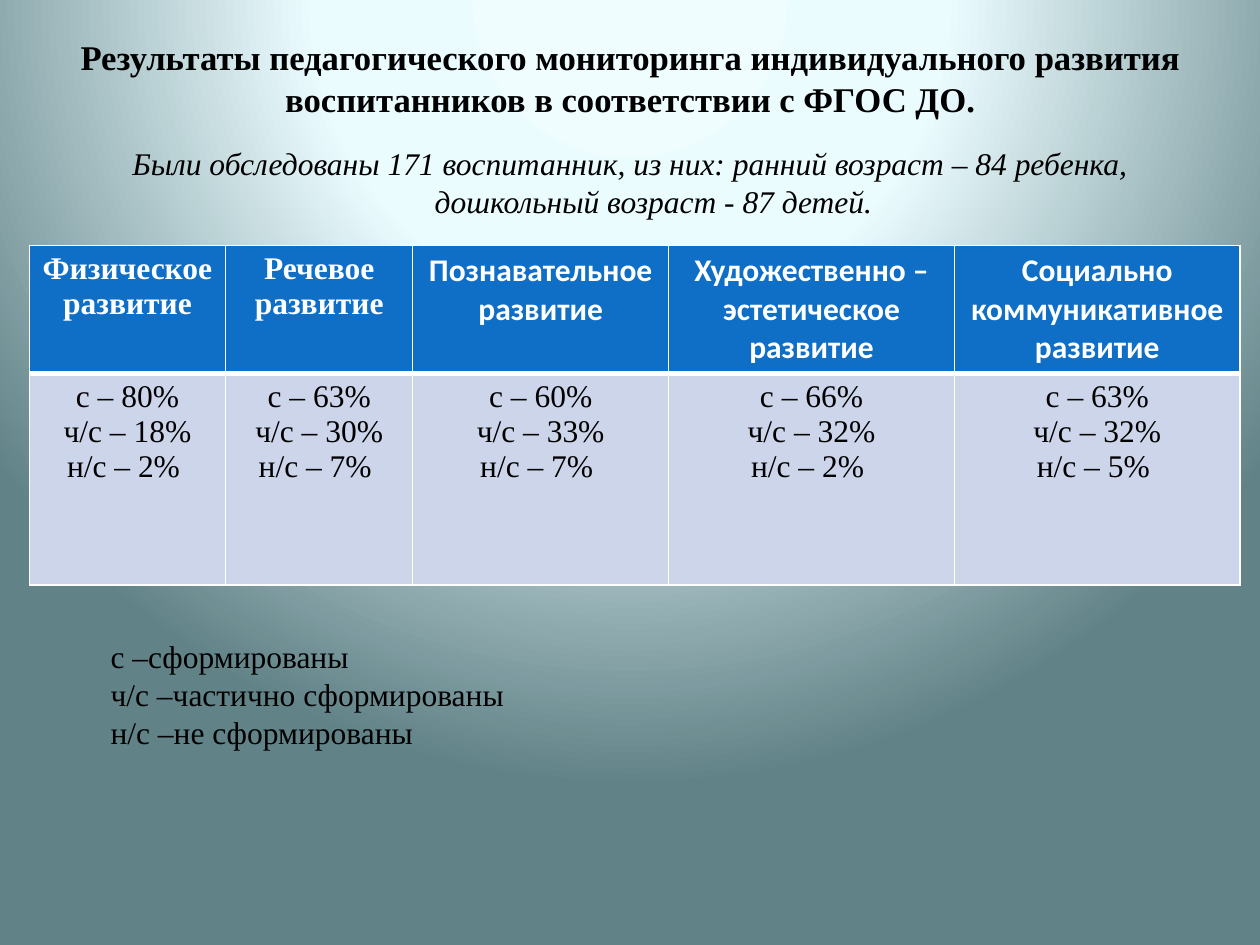
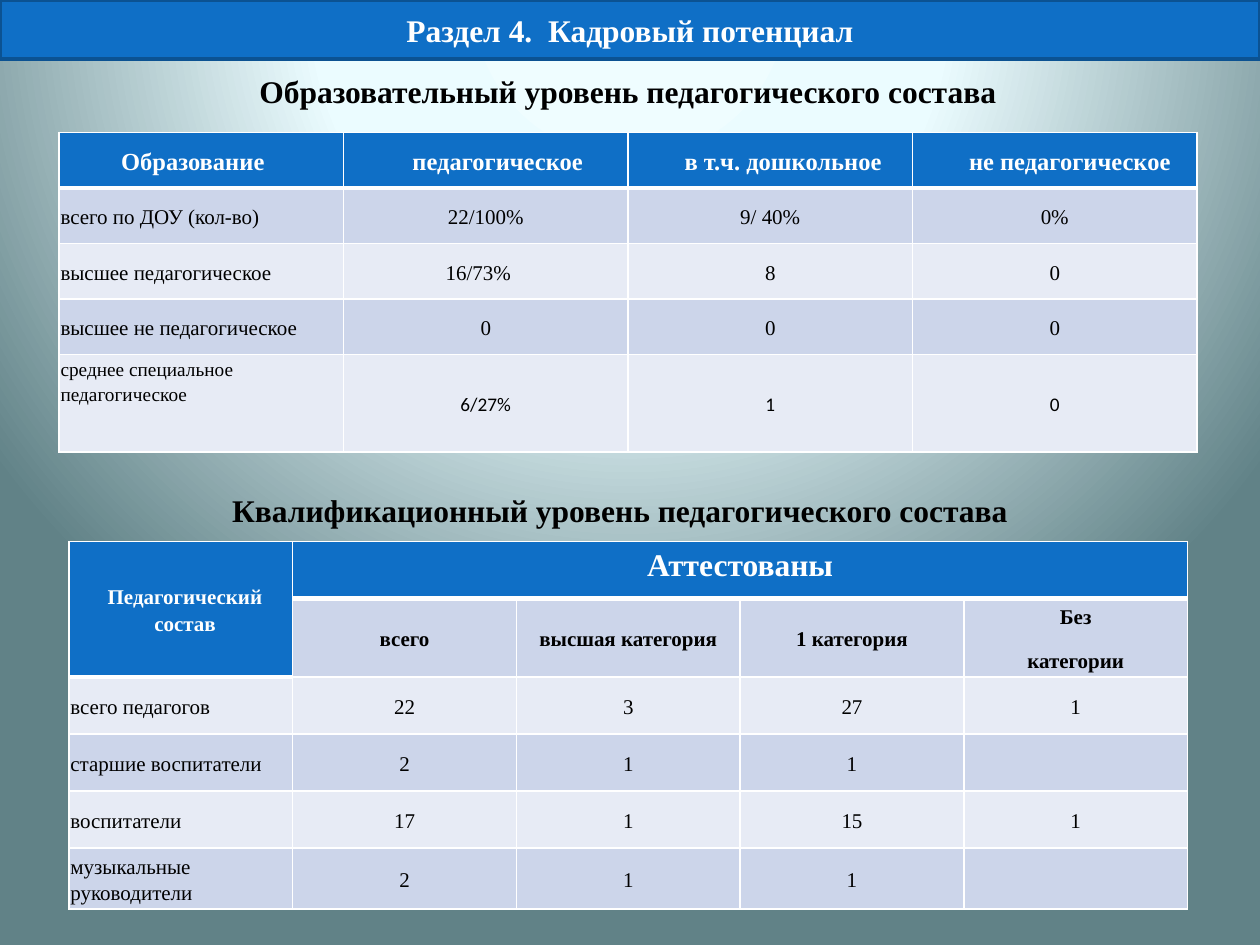
"""Build two slides with monitoring results and staff qualification tables."""
from lxml import etree
from pptx import Presentation
from pptx.dml.color import RGBColor
from pptx.enum.shapes import MSO_SHAPE
from pptx.enum.text import MSO_ANCHOR, MSO_AUTO_SIZE, PP_ALIGN
from pptx.oxml.ns import qn
from pptx.util import Cm, Pt

LEFT, CENTER, RIGHT = PP_ALIGN.LEFT, PP_ALIGN.CENTER, PP_ALIGN.RIGHT
TOP, MIDDLE = MSO_ANCHOR.TOP, MSO_ANCHOR.MIDDLE
RECTANGLE = MSO_SHAPE.RECTANGLE
NO_AUTOFIT = MSO_AUTO_SIZE.NONE

SERIF, SANS = "Times New Roman", "Calibri"
COLORS = {
    "accent": "0F6FC6",
    "accent_edge": "0B5292",
    "band_dark": "CCD5EA",
    "band_light": "E7EBF5",
    "white": "FFFFFF",
    "black": "000000",
}
BACKGROUND_STOPS = ((0, "EFFDFF"), (40, "EBFCFF"), (100, "618287"))

MONITORING = [
    ["Физическое развитие", "Речевое развитие", "Познавательное развитие",
     "Художественно – эстетическое развитие", "Социально коммуникативное\nразвитие"],
    ["с – 80%\nч/с – 18%\nн/с – 2% ", "с – 63%\nч/с – 30%\nн/с – 7% ",
     "с – 60%\nч/с – 33%\nн/с – 7% ", "с – 66%\nч/с – 32%\nн/с – 2% ",
     "с – 63%\nч/с – 32%\nн/с – 5% "],
]
EDUCATION = [
    ["Образование", "педагогическое", "в т.ч. дошкольное", "не педагогическое"],
    ["всего по ДОУ (кол-во)", "22/100%", "9/ 40%", "0%"],
    ["высшее педагогическое", "16/73%", "8", "0"],
    ["высшее не педагогическое", "0", "0", "0"],
    ["среднее специальное педагогическое", "6/27%", "1", "0"],
]
QUALIFICATION = [
    ["Педагогический состав", "Аттестованы", "", "", ""],
    ["", "всего", "высшая категория", "1 категория", "Без\nкатегории"],
    ["всего педагогов", "22", "3", "27", "1"],
    ["старшие воспитатели", "2", "1", "1", ""],
    ["воспитатели", "17", "1", "15", "1"],
    ["музыкальные руководители", "2", "1", "1", ""],
]


def rgb(name):
    """Return the palette colour of this name."""
    return RGBColor.from_string(COLORS[name])


def write_text(frame, text, size=18, font=SERIF, color="black", bold=False, italic=False,
               align=LEFT, line_spacing=None, space_after=0):
    """Write one paragraph per line of text and format it."""
    frame.word_wrap = True
    for index, line in enumerate(text.split("\n")):
        paragraph = frame.add_paragraph() if index else frame.paragraphs[0]
        paragraph.text = line
        paragraph.alignment = align
        paragraph.line_spacing = line_spacing
        paragraph.space_before = Pt(0)
        paragraph.space_after = Pt(space_after)
        for run in paragraph.runs:
            run.font.name = font
            run.font.size = Pt(size)
            run.font.bold = bold
            run.font.italic = italic
            run.font.color.rgb = rgb(color)


def place(shape, left, top, width, height):
    """Move and size a shape, in centimetres."""
    shape.left, shape.top = Cm(left), Cm(top)
    shape.width, shape.height = Cm(width), Cm(height)


def set_background(master):
    """Give the master the radial gradient that every slide shows."""
    master.background.fill.gradient()
    gradient = master.element.cSld.find(".//" + qn("a:gradFill"))
    for child in list(gradient):
        gradient.remove(child)
    stops = etree.SubElement(gradient, qn("a:gsLst"))
    for position, color in BACKGROUND_STOPS:
        stop = etree.SubElement(stops, qn("a:gs"), pos=str(position * 1000))
        etree.SubElement(stop, qn("a:srgbClr"), val=color)
    circle = etree.SubElement(gradient, qn("a:path"), path="circle")
    etree.SubElement(circle, qn("a:fillToRect"), l="50000", t="-80000", r="50000", b="180000")


def set_title(slide, text, position, size):
    """Fill the title placeholder with a bold centred heading."""
    title = slide.shapes.title
    place(title, *position)
    title.text_frame.auto_size = NO_AUTOFIT
    title.text_frame.vertical_anchor = MIDDLE
    write_text(title.text_frame, text, size=size, bold=True, align=CENTER)


def set_body(slide, text, position):
    """Fill the body placeholder with an unbulleted hanging paragraph."""
    body = slide.placeholders[1]
    place(body, *position)
    body.text_frame.auto_size = NO_AUTOFIT
    write_text(body.text_frame, text, italic=True, align=CENTER)
    properties = body.text_frame.paragraphs[0]._p.get_or_add_pPr()
    properties.set("marL", str(Cm(0.95)))
    properties.set("indent", str(-Cm(0.95)))
    etree.SubElement(properties, qn("a:buNone"))


def add_text_box(slide, text, position, **text_format):
    """Add a vertically centred text box."""
    box = slide.shapes.add_textbox(*map(Cm, position))
    box.text_frame.vertical_anchor = MIDDLE
    write_text(box.text_frame, text, **text_format)


def add_section_band(slide, text):
    """Add the full-width section band at the top of the slide."""
    band = slide.shapes.add_shape(RECTANGLE, 0, 0, Cm(25.4), Cm(1.19))
    band.shadow.inherit = False
    band.fill.solid()
    band.fill.fore_color.rgb = rgb("accent")
    band.line.color.rgb = rgb("accent_edge")
    band.line.width = Pt(2)
    band.text_frame.vertical_anchor = MIDDLE
    write_text(band.text_frame, text, color="white", bold=True, align=CENTER)


def style_cell(cell, fill, top, bottom):
    """Draw white borders of the given widths and fill the cell."""
    properties = cell._tc.get_or_add_tcPr()
    for side, width in (("L", 1), ("R", 1), ("T", top), ("B", bottom)):
        line = etree.SubElement(properties, qn("a:ln" + side), w=str(Pt(width)))
        solid = etree.SubElement(line, qn("a:solidFill"))
        etree.SubElement(solid, qn("a:srgbClr"), val=COLORS["white"])
    cell.fill.solid()
    cell.fill.fore_color.rgb = rgb(fill)


def add_table(slide, rows, left, top, widths, heights, cell_format, extra_headers=()):
    """Add a banded table; cell_format(row, column) gives each cell's text format."""
    shape = slide.shapes.add_table(len(rows), len(widths), Cm(left), Cm(top),
                                   Cm(sum(widths)), Cm(sum(heights)))
    table = shape.table
    for column, width in zip(table.columns, widths):
        column.width = Cm(width)
    for row, height in zip(table.rows, heights):
        row.height = Cm(height)
    headers = {(0, column) for column in range(len(widths))} | set(extra_headers)
    for row, texts in enumerate(rows):
        for column, text in enumerate(texts):
            cell = table.cell(row, column)
            is_header = (row, column) in headers
            fill = "accent" if is_header else "band_dark" if row % 2 else "band_light"
            below_header = not is_header and (row - 1, column) in headers
            last_header = is_header and (row + 1, column) not in headers
            style_cell(cell, fill, 3 if below_header else 1, 3 if last_header else 1)
            text_format = {"color": "white" if is_header else "black", "bold": is_header}
            write_text(cell.text_frame, text, **(text_format | cell_format(row, column)))
    return table


def make_compact(table):
    """Centre all cells vertically and shrink their margins."""
    for cell in table.iter_cells():
        cell.vertical_anchor = MIDDLE
        cell.margin_left = cell.margin_right = Cm(0.03)
        cell.margin_top = cell.margin_bottom = Cm(0.03)


def monitoring_format(row, column):
    """Return the text format of a monitoring cell."""
    return {"align": CENTER, "font": SANS if row == 0 and column > 1 else SERIF}


def education_format(row, column):
    """Return the text format of an education cell."""
    text_format = {"size": 12, "line_spacing": 1.15, "space_after": 10,
                   "align": CENTER if row and column else LEFT}
    if row == 0:
        text_format["size"] = 14
    if row == 4:
        text_format |= {"size": 11, "font": SANS if column else SERIF}
    if (row, column) == (2, 1):
        text_format["align"] = RIGHT
    return text_format


def qualification_format(row, column):
    """Return the text format of a qualification cell."""
    if row == 0 and column:
        return {"align": CENTER}
    text_format = {"size": 12, "line_spacing": 1.15, "space_after": 10,
                   "align": LEFT if row > 1 and column == 0 else CENTER}
    if row == 1:
        text_format["bold"] = True
    return text_format


def build_monitoring_slide(presentation):
    """Build the slide with the monitoring results."""
    slide = presentation.slides.add_slide(presentation.slide_layouts[1])
    set_title(slide, "Результаты педагогического мониторинга индивидуального развития "
              "воспитанников в соответствии с ФГОС ДО.", (1.27, 0.72, 22.86, 1.68), 19.8)
    set_body(slide, "Были обследованы 171 воспитанник, из них: ранний возраст – 84 ребенка, "
             "дошкольный возраст - 87 детей.", (1.27, 2.77, 22.86, 14.25))
    add_table(slide, MONITORING, 0.59, 4.95, (3.96, 3.77, 5.16, 5.76, 5.76), (2.57, 4.26),
              monitoring_format)
    add_text_box(slide, "с –сформированы\nч/с –частично сформированы\nн/с –не сформированы",
                 (1.98, 12.7, 19.45, 2.57))


def build_staff_slide(presentation):
    """Build the slide with the education and qualification tables."""
    slide = presentation.slides.add_slide(presentation.slide_layouts[5])
    set_title(slide, "Образовательный уровень педагогического состава",
              (1.19, 1.27, 22.94, 1.12), 18)
    education = add_table(slide, EDUCATION, 1.19, 2.67, [5.735] * 4, [1.12] * 4 + [1.96],
                          education_format)
    make_compact(education)
    for column, margin in enumerate((1.25, 1.39, 1.14, 1.14)):
        education.cell(0, column).margin_left = Cm(margin)
    education.cell(2, 1).margin_right = Cm(2.36)
    education.cell(4, 0).vertical_anchor = TOP
    add_section_band(slide, "Раздел 4.  Кадровый потенциал")
    add_text_box(slide, "Квалификационный уровень педагогического состава",
                 (0, 9.73, 25, 1.12), bold=True, align=CENTER)
    qualification = add_table(slide, QUALIFICATION, 1.39, 10.92, [4.51] * 5,
                              (1.15, 1.58, 1.15, 1.15, 1.15, 1.21), qualification_format,
                              extra_headers=[(1, 0)])
    make_compact(qualification)
    staff, certified = qualification.cell(0, 0), qualification.cell(0, 1)
    staff.margin_left = Cm(0.2)
    staff.merge(qualification.cell(1, 0))
    certified.vertical_anchor = TOP
    certified.margin_top = Cm(0.13)
    certified.merge(qualification.cell(0, 4))


def main():
    """Build and save the presentation."""
    presentation = Presentation()
    presentation.slide_width, presentation.slide_height = Cm(25.4), Cm(19.05)
    set_background(presentation.slide_master)
    build_monitoring_slide(presentation)
    build_staff_slide(presentation)
    presentation.save("out.pptx")


if __name__ == "__main__":
    main()
